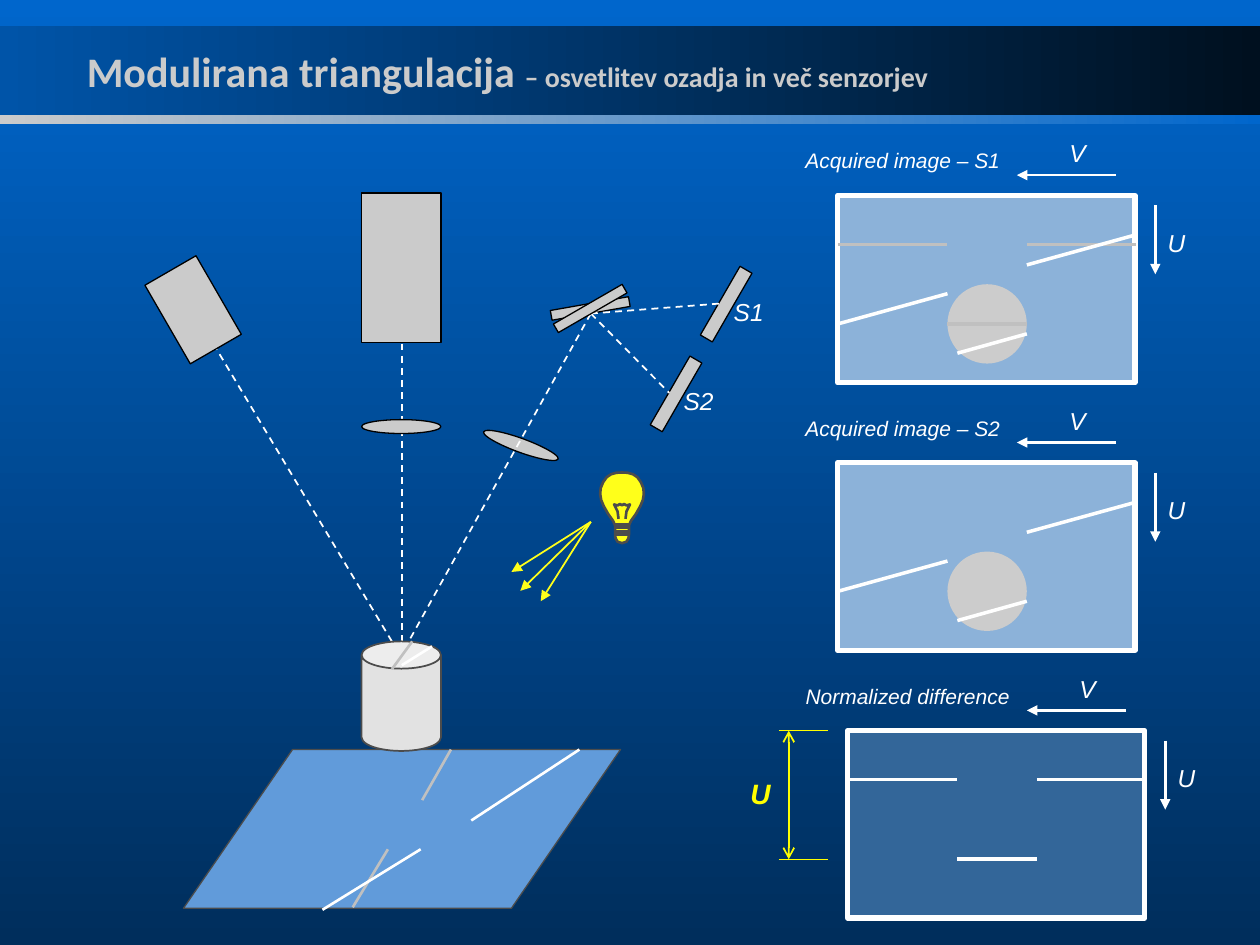
from lxml.etree import SubElement
from pptx import Presentation
from pptx.dml.color import RGBColor
from pptx.enum.dml import MSO_LINE
from pptx.enum.shapes import MSO_CONNECTOR, MSO_SHAPE
from pptx.enum.text import MSO_ANCHOR, PP_ALIGN
from pptx.oxml.ns import qn
from pptx.util import Inches, Pt

COLUMNS = 254
WHITE, SILVER, GREY, YELLOW = "FFFFFF", "CBCBCB", "C0C0C0", "FFFF1A"
BLACK, EDGE, BRIGHT = "000000", "4C4C4C", "FFFF00"


def color(code):
    return RGBColor.from_string(code)


def write(para, text, size=14, font="Arial", ink=WHITE, bold=False, italic=True):
    span = para.add_run()
    span.text = text
    span.font.size, span.font.name = Pt(size), font
    span.font.bold, span.font.italic = bold, italic
    span.font.color.rgb = color(ink)


def mirror(half, center):
    right = [(center + x, y) for x, y in half]
    left = [(center - x, y) for x, y in reversed(half)]
    return right + left


class Scene:
    """Draws styled elements on one slide, measured in grid columns and rows."""

    def __init__(self, deck):
        self.cell = deck.slide_width / COLUMNS
        self.page = deck.slides.add_slide(deck.slide_layouts[6])
        self.shapes = self.page.shapes

    def grid(self, *cells):
        return [round(cell * self.cell) for cell in cells]

    def gradient(self, fill, start, end, angle=0):
        fill.gradient()
        fill.gradient_angle = angle
        for stop, code in zip(fill.gradient_stops, (start, end)):
            stop.color.rgb = color(code)

    def paint(self, shape, fill=None, line=None, width=0.75):
        shape.shadow.inherit = False
        if fill:
            shape.fill.solid()
            shape.fill.fore_color.rgb = color(fill)
        else:
            shape.fill.background()
        if line:
            shape.line.color.rgb = color(line)
            shape.line.width = Pt(width)
        else:
            shape.line.fill.background()

    def shape(self, kind, at, fill=SILVER, line=BLACK, width=0.75, turn=0, adjust=None):
        shape = self.shapes.add_shape(kind, *self.grid(*at))
        self.paint(shape, fill, line, width)
        shape.rotation = turn
        if adjust:
            shape.adjustments[0] = adjust
        return shape

    def band(self, at, start, end):
        shape = self.shape(MSO_SHAPE.RECTANGLE, at, line=None)
        self.gradient(shape.fill, start, end)

    def outline(self, points, fill=None, close=False):
        first, *rest = [self.grid(*point) for point in points]
        builder = self.shapes.build_freeform(*first)
        builder.add_line_segments(rest, close=close)
        self.paint(builder.convert_to_shape(), fill, EDGE, 1.5)

    def line(self, start, end, ink=WHITE, width=1.5, dash=False, head=None, tail=None):
        line = self.shapes.add_connector(
            MSO_CONNECTOR.STRAIGHT, *self.grid(*start, *end))
        line.line.color.rgb = color(ink)
        line.line.width = Pt(width)
        if dash:
            line.line.dash_style = MSO_LINE.DASH
        stroke = line.line._get_or_add_ln()
        for tag, kind in (("a:headEnd", head), ("a:tailEnd", tail)):
            if kind:
                SubElement(stroke, qn(tag)).set("type", kind)
        SubElement(line._element.spPr, qn("a:effectLst"))

    def ray(self, start, end):
        self.line(start, end, width=1, dash=True)

    def text(self, at, *spans, align=PP_ALIGN.CENTER):
        box = self.shapes.add_textbox(*self.grid(*at))
        box.text_frame.word_wrap = True
        box.text_frame.vertical_anchor = MSO_ANCHOR.MIDDLE
        para = box.text_frame.paragraphs[0]
        para.alignment = align
        for text, style in spans:
            write(para, text, **style)

    def panel(self, left, top, caption, fill, object_fill=None, level=None, slanted=False):
        def spot(x, y):
            return left + x, top + y

        self.shape(MSO_SHAPE.RECTANGLE, (left, top, 59.9, 37.8), fill, WHITE, 3)
        self.line(spot(56.1, -4.1), spot(36.1, -4.1), tail="triangle")
        self.line(spot(64, 2), spot(64, 15.9), tail="triangle")
        self.text((*spot(64, 5.9), 8.1, 7.1), ("U", {}))
        self.text((*spot(44.2, -12.1), 8.1, 7.1), ("V", {}))
        self.text((159, top - 10.1, left - 122.9, 6.1), (caption, {"size": 12}))
        if object_fill:
            at = (*spot(22.1, 17.9), 16, 16)
            self.shape(MSO_SHAPE.OVAL, at, object_fill, None)
        if level:
            self.line(spot(0, 9.9), spot(22.1, 9.9), level, 1.75)
            self.line(spot(38.1, 9.9), spot(60.2, 9.9), level, 1.75)
            self.line(spot(22.1, 25.9), spot(38.1, 25.9), level, 2)
        if slanted:
            self.line(spot(24.1, 31.8), spot(38.1, 27.9), width=2)
            self.line(spot(0, 25.9), spot(22.1, 19.8), width=2)
            self.line(spot(38.1, 14), spot(60.2, 7.9), width=2)


def draw_header(scene):
    scene.gradient(scene.page.background.fill, "0066CC", "002E5C", 270)
    scene.band((0, 23.1, COLUMNS, 2), SILVER, "0066CC")
    scene.band((0, 5.3, COLUMNS, 18), "0054A8", "00101F")
    style = {"font": "Calibri", "ink": SILVER, "bold": True, "italic": False}
    scene.text((15, 5.3, 192, 18),
               ("Modulirana triangulacija ", {**style, "size": 24}),
               ("– osvetlitev ozadja in več senzorjev", {**style, "size": 16}),
               align=PP_ALIGN.LEFT)


def draw_setup(scene):
    mirror_center = (119.1, 63.2)
    scene.ray((43, 69.3), (79, 129.3))
    scene.ray((81, 47.2), (81, 159.3))
    scene.shape(MSO_SHAPE.PARALLELOGRAM, (37, 151.1, 88.1, 32), "619BDA", EDGE, adjust=0.687)
    scene.line((78.2, 171.2), (71.1, 182.9), GREY)
    scene.line((90.9, 151.1), (85.1, 161.3), GREY)
    scene.shape(MSO_SHAPE.RECTANGLE, (72.9, 38.9, 16, 30.2))
    scene.shape(MSO_SHAPE.RECTANGLE, (33, 53.3, 11.9, 18.3), turn=330)
    scene.shape(MSO_SHAPE.OVAL, (72.9, 84.6, 16, 2.8))
    scene.shape(MSO_SHAPE.OVAL, (97, 88.4, 16, 2.8), turn=20)
    for left, top in ((138.4, 59.9), (128.3, 78)):
        scene.shape(MSO_SHAPE.RECTANGLE, (left, top, 16, 2.8), turn=300)
    scene.ray(mirror_center, (81, 131.8))
    scene.shape(MSO_SHAPE.CAN, (72.9, 129.3, 16, 22.1), "E2E2E2", EDGE, 1, adjust=0.344)
    scene.line((83.1, 129.3), (79, 134.9), GREY)
    for start, end in (((87.1, 130.3), (81, 134.1)), ((84.8, 171.2), (65, 183.4)),
                       ((116.8, 151.1), (95, 165.4))):
        scene.line(start, end)
    mirror_at = (111, 61.2, 16, 2)
    scene.shape(MSO_SHAPE.RECTANGLE, mirror_at, turn=350)
    for name, left, top in (("S1", 145, 59.2), ("S2", 134.9, 77.2)):
        scene.ray(mirror_center, (left, top + 2))
        scene.text((left, top, 11.9, 7.1), (name, {}))
    scene.shape(MSO_SHAPE.RECTANGLE, mirror_at, turn=330)


def draw_lamp(scene):
    center = 125.4
    glass = [(0, 109.5), (0.9, 109.2), (1.3, 108.5), (1.4, 107.7), (1.4, 105.9),
             (1.8, 105), (2.8, 103.6), (3.7, 102), (4.2, 100.8), (4.4, 99.6),
             (4.3, 98.4), (3.8, 97.2), (3.1, 96.2), (2.2, 95.6), (1.1, 95.3), (0, 95.25)]
    filament = [(0.7, 104.6), (0.9, 103.1), (1.6, 101.7), (0.9, 101.9),
                (0.4, 101.6), (0, 101.9)]
    thread = [(center + 1.4 * side, row) for row, sides in
              ((105.7, (-1, 1)), (106.4, (1, -1)), (107.2, (-1, 1)), (107.7, (1, -1)))
              for side in sides]
    scene.outline(mirror(glass, center), YELLOW, close=True)
    scene.outline(mirror(filament, center))
    scene.outline(thread)
    for tip in ((103.1, 115.3), (109, 121.2), (104.9, 119.1)):
        scene.line((119.1, 105.2), tip, YELLOW, 1, tail="triangle")


def draw_results(scene):
    scene.panel(168.9, 39.4, "Acquired image – S1", "8CB2D9", "CCCCCC", GREY, slanted=True)
    scene.panel(168.9, 93.3, "Acquired image – S2", "8CB2D9", "CCCCCC", slanted=True)
    scene.panel(170.9, 147.3, "Normalized difference", "336699", level=WHITE)
    top, bottom = 147.3, 173.2
    for row in (top, bottom):
        scene.line((157, row), (166.9, row), BRIGHT, 0.75)
    scene.line((159, top), (159, bottom), BRIGHT, 1, head="arrow", tail="arrow")
    scene.text((148.8, 155.2, 9.9, 9.4),
               ("U", {"size": 16, "ink": BRIGHT, "bold": True}), align=PP_ALIGN.LEFT)


def main():
    deck = Presentation()
    deck.slide_width, deck.slide_height = Inches(10), Inches(7.5)
    scene = Scene(deck)
    for draw in (draw_header, draw_setup, draw_lamp, draw_results):
        draw(scene)
    deck.save("out.pptx")


if __name__ == "__main__":
    main()
